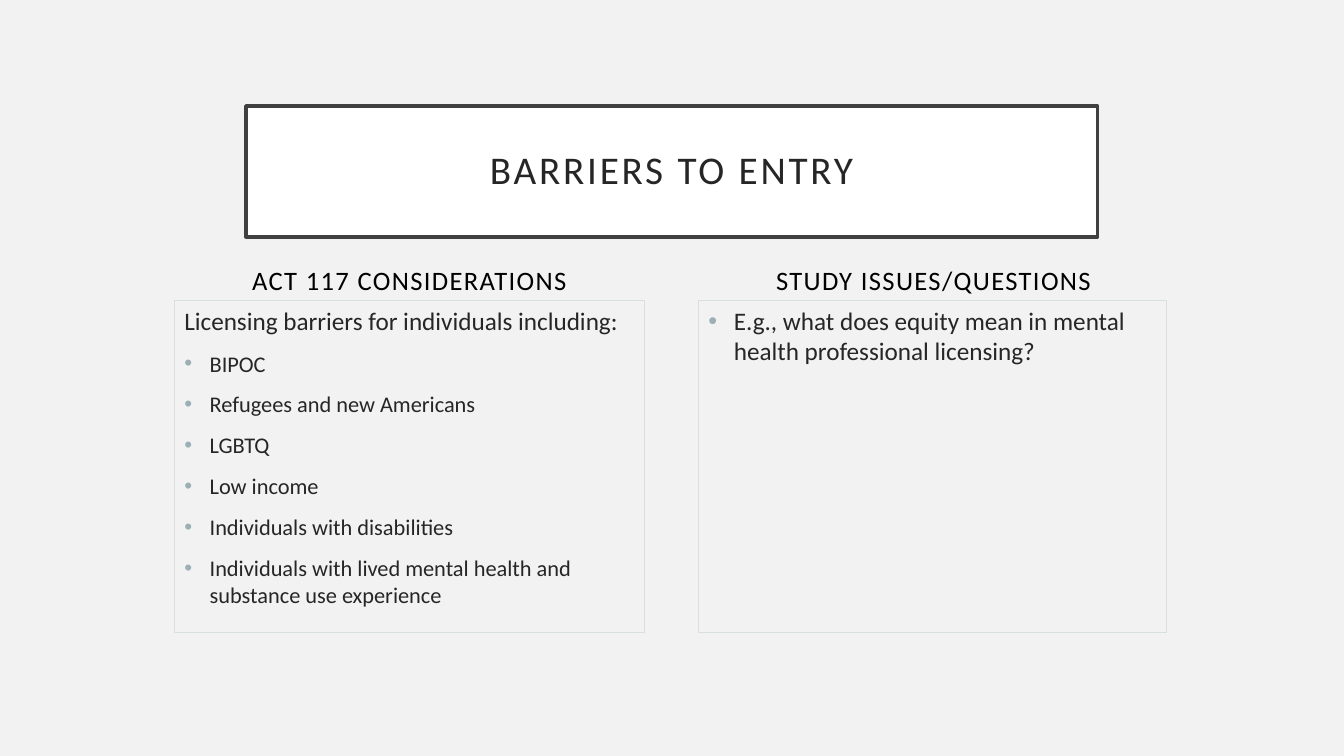
import pptx
import pptx.util
import pptx.dml.color
import pptx.enum.text
import pptx.oxml
import pptx.oxml.ns

Cm, Pt = pptx.util.Cm, pptx.util.Pt
ALIGN = pptx.enum.text.PP_ALIGN
ANCHOR = pptx.enum.text.MSO_ANCHOR
COLORS = {
    "background": "F2F2F2",
    "white": "FFFFFF",
    "frame": "404040",
    "panel_line": "D7DFE1",
    "bullet": "9BAFB5",
    "text": "262626",
    "heading": "000000",
}
HEADING_TOP, HEADING_HEIGHT = 6.43, 1.14
PANEL_TOP, PANEL_HEIGHT = 7.57, 8.38
INDENT = Cm(0.64)


class ComparisonSlide:
    """Hold the style and the current slide, and fill its placeholders."""

    def __init__(self, deck):
        self.font = "Calibri"
        self.slide = deck.slides.add_slide(deck.slide_layouts[4])
        self.slide.background.fill.solid()
        self.slide.background.fill.fore_color.rgb = self.color("background")

    def color(self, name):
        """Return the named colour."""
        return pptx.dml.color.RGBColor.from_string(COLORS[name])

    def place(self, index, box, anchor):
        """Move a placeholder to a box in centimetres and return it."""
        holder = self.slide.placeholders[index]
        holder.left, holder.top, holder.width, holder.height = map(Cm, box)
        frame = holder.text_frame
        frame.word_wrap = True
        frame.auto_size = pptx.enum.text.MSO_AUTO_SIZE.NONE
        frame.vertical_anchor = anchor
        return holder

    def outline(self, holder, color, width):
        """Draw the border of a placeholder."""
        holder.line.color.rgb = self.color(color)
        holder.line.width = Pt(width)

    def add_text(self, paragraph, text, size, color="text", align=ALIGN.LEFT, before=10, tracking=0):
        """Add one formatted run to a paragraph."""
        paragraph.alignment = align
        paragraph.space_before = Pt(before)
        paragraph.line_spacing = 1.0
        run = paragraph.add_run()
        run.text = text
        run.font.name = self.font
        run.font.size = Pt(size)
        run.font.bold = False
        run.font.color.rgb = self.color(color)
        run._r.get_or_add_rPr().set("spc", str(tracking * 100))

    def set_bullet(self, paragraph, bulleted):
        """Give a paragraph a hanging coloured bullet or none."""
        properties = paragraph._p.get_or_add_pPr()
        properties.set("marL", str(INDENT if bulleted else 0))
        properties.set("indent", str(-INDENT if bulleted else 0))
        parts = ["<a:buNone {}/>"]
        if bulleted:
            parts = [
                '<a:buClr {}><a:srgbClr val="' + COLORS["bullet"] + '"/></a:buClr>',
                '<a:buFont {} typeface="Arial"/>',
                '<a:buChar {} char="•"/>',
            ]
        for part in parts:
            properties.append(pptx.oxml.parse_xml(part.format(pptx.oxml.ns.nsdecls("a"))))

    def title(self, text, box):
        """Fill the framed title."""
        holder = self.place(0, box, ANCHOR.MIDDLE)
        holder.fill.solid()
        holder.fill.fore_color.rgb = self.color("white")
        self.outline(holder, "frame", 2.5)
        frame = holder.text_frame
        frame.margin_left = frame.margin_right = frame.margin_top = frame.margin_bottom = Cm(0.5)
        paragraph = frame.paragraphs[0]
        self.add_text(paragraph, text, 28, align=ALIGN.CENTER, before=0, tracking=2)
        paragraph.line_spacing = 0.9

    def heading(self, index, text, left, width):
        """Fill a column heading."""
        holder = self.place(index, (left, HEADING_TOP, width, HEADING_HEIGHT), ANCHOR.BOTTOM)
        self.add_text(holder.text_frame.paragraphs[0], text, 19, "heading", ALIGN.CENTER, tracking=1)

    def panel(self, index, items, left, width):
        """Fill a bordered list from (text, size, bulleted) items."""
        holder = self.place(index, (left, PANEL_TOP, width, PANEL_HEIGHT), ANCHOR.TOP)
        self.outline(holder, "panel_line", 0.75)
        frame = holder.text_frame
        for number, (text, size, bulleted) in enumerate(items):
            paragraph = frame.add_paragraph() if number else frame.paragraphs[0]
            self.set_bullet(paragraph, bulleted)
            self.add_text(paragraph, text, size)


def main():
    """Build and save the slide."""
    deck = pptx.Presentation()
    deck.slide_width, deck.slide_height = Cm(33.87), Cm(19.05)
    barriers = ComparisonSlide(deck)
    barriers.title("BARRIERS TO ENTRY", (6.2, 2.67, 21.46, 3.3))

    groups = [
        "BIPOC",
        "Refugees and new Americans",
        "LGBTQ",
        "Low income",
        "Individuals with disabilities",
        "Individuals with lived mental health and substance use experience",
    ]
    considerations = [("Licensing barriers for individuals including:", 18, False)]
    considerations += [(group, 16, True) for group in groups]
    questions = [("E.g., what does equity mean in mental health professional licensing?", 18, True)]

    barriers.heading(1, "ACT 117 CONSIDERATIONS", 4.39, 11.86)
    barriers.panel(2, considerations, 4.39, 11.86)
    barriers.heading(3, "STUDY ISSUES/QUESTIONS", 17.6, 11.86)
    barriers.panel(4, questions, 17.6, 11.81)
    deck.save("out.pptx")


if __name__ == "__main__":
    main()
